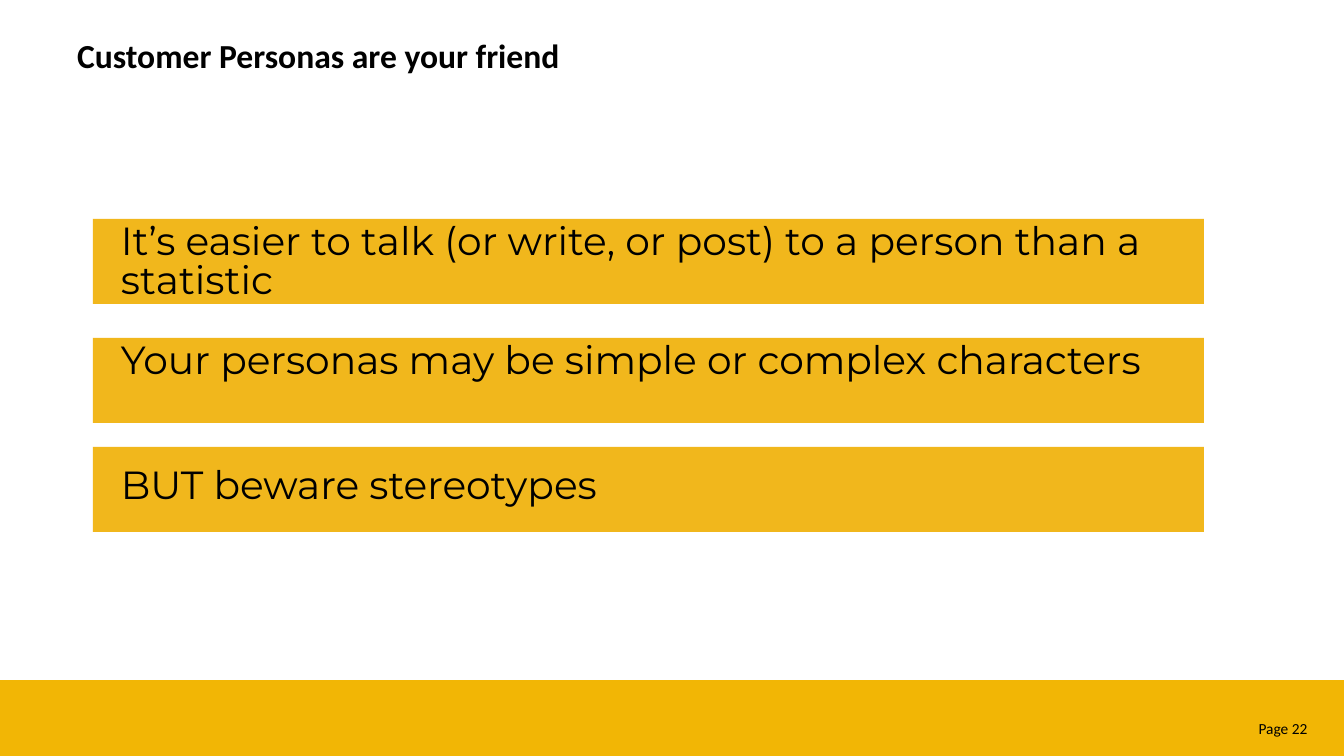
from pptx import Presentation
from pptx import util as u
from pptx.dml.color import RGBColor
from pptx.enum import shapes, text

PX = 914400 / 100.8
BLACK = RGBColor(0x00, 0x00, 0x00)
FOOTER_GOLD = RGBColor(0xF2, 0xB6, 0x05)
BAR_GOLD = RGBColor(0xF1, 0xB7, 0x1C)


def add_bar(left, top, width, height, color):
    shape = slide.shapes.add_shape(
        shapes.MSO_SHAPE.RECTANGLE, *[round(v * PX) for v in (left, top, width, height)])
    shape.shadow.inherit = False
    shape.fill.solid()
    shape.fill.fore_color.rgb = color
    shape.line.fill.background()


def write(shape, words, size, font, bold=False):
    frame = shape.text_frame
    frame.word_wrap = True
    frame.auto_size = text.MSO_AUTO_SIZE.NONE
    frame.vertical_anchor = text.MSO_ANCHOR.TOP
    paragraph = frame.paragraphs[0]
    run = paragraph.add_run()
    run.text = words
    run.font.size = u.Pt(size)
    run.font.name = font
    run.font.bold = bold
    run.font.color.rgb = BLACK
    return paragraph


presentation = Presentation()
presentation.slide_width = round(1344 * PX)
presentation.slide_height = round(756 * PX)
slide = presentation.slides.add_slide(presentation.slide_layouts[5])

# Footer band and page number
add_bar(0, 680, 1344, 76, FOOTER_GOLD)
page_box = slide.shapes.add_textbox(*[round(v * PX) for v in (1198, 714, 123, 29)])
write(page_box, "Page 22 ", 11, "Calibri").alignment = text.PP_ALIGN.RIGHT

# Title
title = slide.shapes.title
title.left, title.top, title.width, title.height = [
    round(v * PX) for v in (67, 30, 1210, 79)]
write(title, "Customer Personas are your friend", 24, "Calibri", True).alignment = text.PP_ALIGN.LEFT

# Statement bars: bar top, text top, text width, wording
statements = [
    (219, 219, 1077, "It’s easier to talk (or write, or post) to a person than a statistic"),
    (338, 338, 1052, "Your personas may be simple or complex characters"),
    (447, 463, 1052, "BUT beware stereotypes"),
]
for bar_top, text_top, text_width, words in statements:
    add_bar(93, bar_top, 1111, 85, BAR_GOLD)
    statement_box = slide.shapes.add_textbox(
        *[round(v * PX) for v in (111, text_top, text_width, 50 if text_top > bar_top else 90)])
    write(statement_box, words, 28, "Montserrat").line_spacing = u.Pt(28)

presentation.save("out.pptx")
